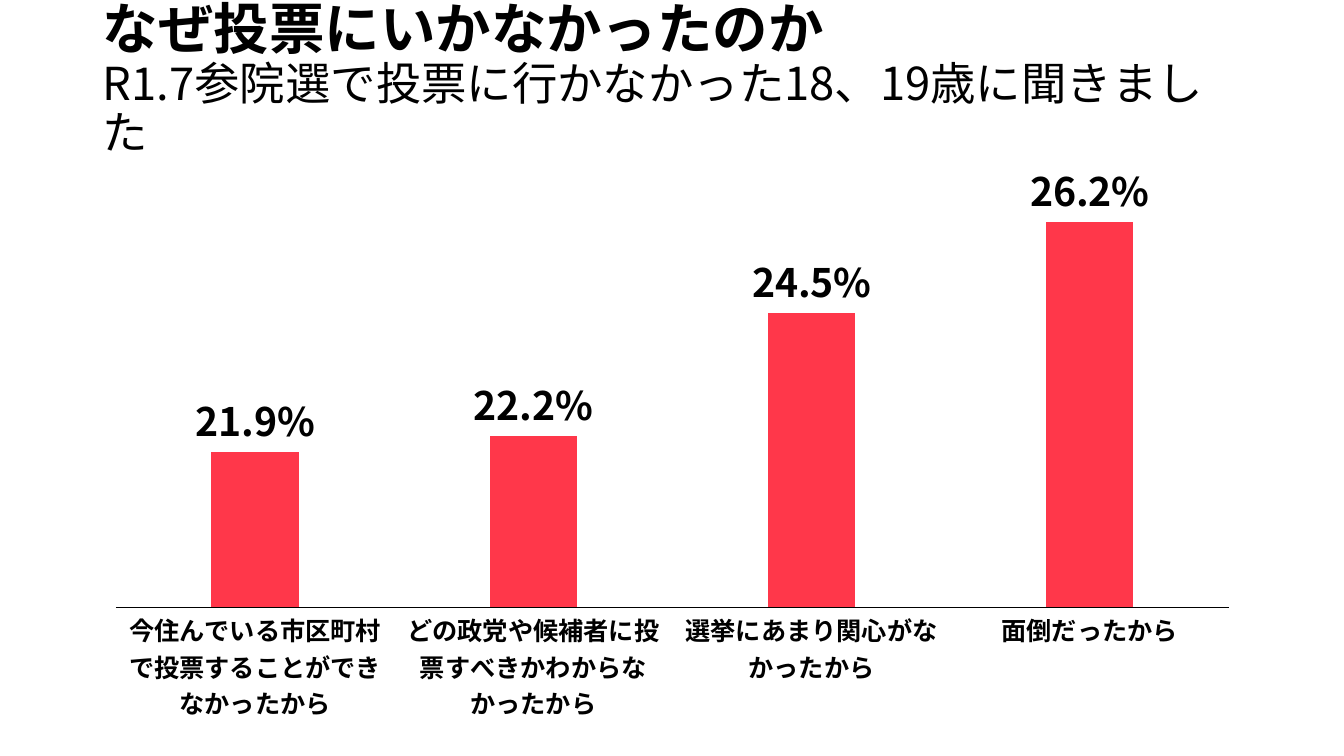
from lxml import etree
from pptx import Presentation
from pptx import util as u
from pptx.chart.data import CategoryChartData
from pptx.dml.color import RGBColor
from pptx.enum import chart as charts, text
from pptx.oxml import parse_xml
from pptx.oxml.ns import nsdecls, qn

COLORS = {"text": "000000", "bar": "FF374A"}
FONT = "Noto Sans CJK JP"


def format_font(font, size, bold=False):
    font.name = FONT
    font.size = u.Pt(size)
    font.bold = bold
    font.color.rgb = RGBColor.from_string(COLORS["text"])


def add_run(paragraph, content, **style):
    run = paragraph.add_run()
    run.text = content
    format_font(run.font, **style)


presentation = Presentation()
presentation.slide_width = u.Inches(13.33)
presentation.slide_height = u.Inches(7.5)
slide = presentation.slides.add_slide(presentation.slide_layouts[5])

# Title and subtitle
title = slide.shapes.title
title.left, title.top = u.Inches(0.92), u.Inches(0)
title.width, title.height = u.Inches(11.5), u.Inches(1.6)
frame = title.text_frame
frame.word_wrap = True
frame.auto_size = text.MSO_AUTO_SIZE.NONE
frame.vertical_anchor = text.MSO_ANCHOR.MIDDLE
paragraph = frame.paragraphs[0]
paragraph.alignment = text.PP_ALIGN.LEFT
paragraph.line_spacing = 0.9
add_run(paragraph, "なぜ投票にいかなかったのか", size=39.6, bold=True)
paragraph.add_line_break()
add_run(paragraph, "R1.7参院選で投票に行かなかった18、19歳に聞きました", size=32.4)

# Column chart of reasons
reasons = {
    "今住んでいる市区町村で投票することができなかったから": 0.219,
    "どの政党や候補者に投票すべきかわからなかったから": 0.222,
    "選挙にあまり関心がなかったから": 0.245,
    "面倒だったから": 0.262,
}
data = CategoryChartData(number_format="0.0%")
data.categories = list(reasons)
data.add_series("Series 1", list(reasons.values()))
chart = slide.shapes.add_chart(
    charts.XL_CHART_TYPE.COLUMN_CLUSTERED,
    u.Inches(0.92), u.Inches(1.6), u.Inches(11.5), u.Inches(5.67), data,
).chart
chart.has_legend = False
chart.has_title = False
format_font(chart.font, size=10)

category_axis = chart.category_axis
category_axis.major_tick_mark = charts.XL_TICK_MARK.NONE
category_axis.format.line.color.rgb = RGBColor.from_string(COLORS["text"])
category_axis.format.line.width = u.Pt(0.75)
format_font(category_axis.tick_labels.font, size=18, bold=True)

value_axis = chart.value_axis
value_axis.minimum_scale = 0.19
value_axis.maximum_scale = 0.27
value_axis.has_major_gridlines = False
value_axis.visible = False

plot = chart.plots[0]
plot.gap_width = 219
plot.overlap = -27
plot.vary_by_categories = False
fill = plot.series[0].format.fill
fill.solid()
fill.fore_color.rgb = RGBColor.from_string(COLORS["bar"])

labels = plot.series[0].data_labels
labels.show_value = True
labels.number_format = "0.0%"
labels.number_format_is_linked = False
labels.position = charts.XL_LABEL_POSITION.OUTSIDE_END
format_font(labels.font, size=28, bold=True)

# Keep category labels horizontal so that they wrap
label_body = chart.element.find(f".//{qn('c:catAx')}/{qn('c:txPr')}/{qn('a:bodyPr')}")
label_body.set("rot", "0")
label_body.set("vert", "horz")

# Place the plot area, leaving room below for three-line category labels
plot_area = chart.element.find(".//" + qn("c:plotArea"))
for layout in plot_area.findall(qn("c:layout")):
    plot_area.remove(layout)
plot_area.insert(0, parse_xml(
    f'<c:layout {nsdecls("c")}><c:manualLayout><c:layoutTarget val="inner"/>'
    '<c:xMode val="edge"/><c:yMode val="edge"/><c:x val="0.02"/><c:y val="0.03"/>'
    '<c:w val="0.96"/><c:h val="0.75"/></c:manualLayout></c:layout>'
))

# Japanese glyphs take their typeface from a:ea
for root in (title.element, chart.element):
    for latin in list(root.iter(qn("a:latin"))):
        east_asian = etree.Element(qn("a:ea"), typeface=FONT)
        latin.addnext(east_asian)

presentation.save("out.pptx")
